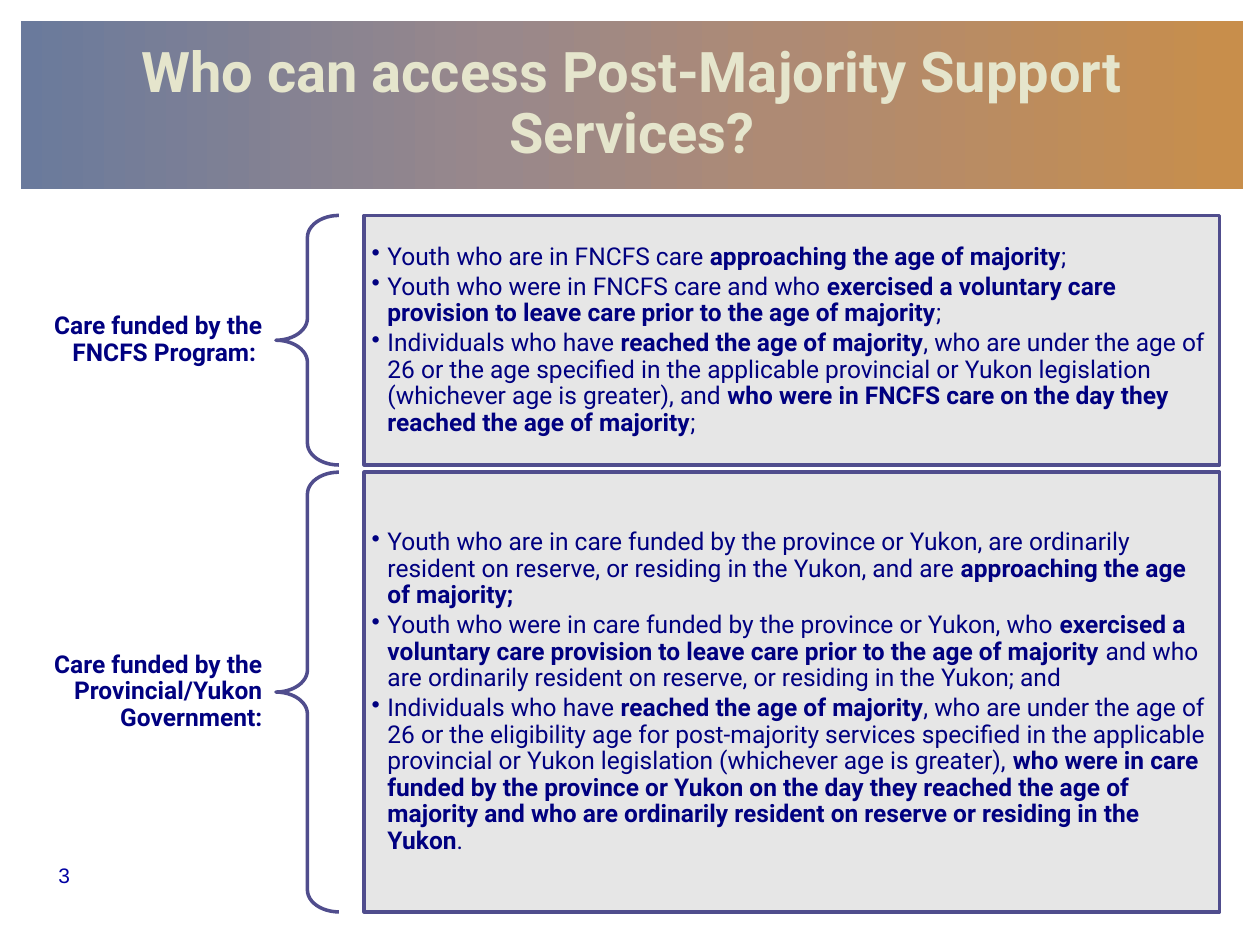
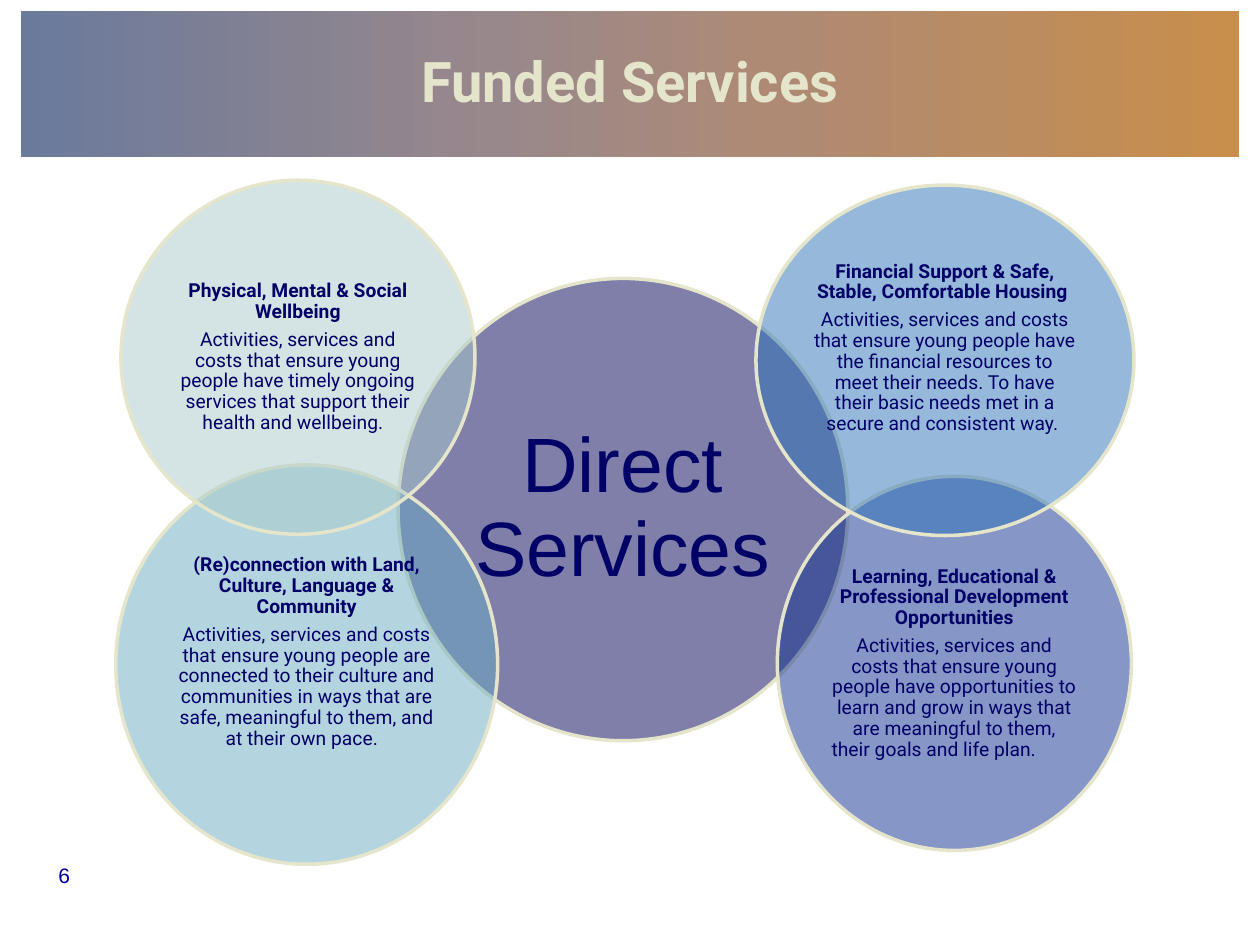
import lxml.etree
import pptx
import pptx.dml.color
import pptx.enum.shapes
import pptx.enum.text
import pptx.oxml.ns
import pptx.util

Pt = pptx.util.Pt
RGB = pptx.dml.color.RGBColor.from_string
qn = pptx.oxml.ns.qn
SHAPE = pptx.enum.shapes.MSO_SHAPE
ANCHOR = pptx.enum.text.MSO_ANCHOR
ALIGN = pptx.enum.text.PP_ALIGN

THEME = {
    "band": [(0, "6A7A9C"), (39, "99888B"), (62, "AE8A74"), (100, "C88E4B")],
    "panel": "E6E6E6",
    "panel_line": "504D8D",
    "circle_line": "E5E5CC",
    "line_width": 2,
    "title": {"name": "Roboto", "size": 32, "color": "E5E5CC", "bold": True},
    "number": {"name": "Arial", "size": 12, "color": "0000A3"},
    "label": {"name": "Roboto", "size": 14, "color": "000080", "bold": True},
    "body": {"name": "Roboto", "size": 14, "color": "000080"},
    "centre": {"name": "Arial", "size": 44, "color": "000066"},
    "circle": {"name": "Roboto", "size": 11, "color": "000066"},
}


def add_shape(slide, preset, box, fill=None, line=None):
    sp = slide.shapes.add_shape(preset, *(Pt(v) for v in box))
    sp.shadow.inherit = False
    if fill:
        sp.fill.solid()
        sp.fill.fore_color.rgb = RGB(fill)
    else:
        sp.fill.background()
    if line:
        sp.line.color.rgb = RGB(line)
        sp.line.width = Pt(THEME["line_width"])
    else:
        sp.line.fill.background()
    return sp


def write(sp, paragraphs, style, align, insets=(7.2, 3.6, 7.2, 3.6), after=0,
          anchor=ANCHOR.MIDDLE, bullet=False):
    """Fill a shape with paragraphs; *stars* enclose bold words."""
    tf = sp.text_frame
    tf.word_wrap = True
    tf.vertical_anchor = anchor
    for side, inset in zip(("left", "top", "right", "bottom"), insets):
        setattr(tf, f"margin_{side}", Pt(inset))
    for i, text in enumerate(paragraphs):
        p = tf.add_paragraph() if i else tf.paragraphs[0]
        for name, value in {"alignment": align, "line_spacing": 0.9,
                            "space_after": Pt(after)}.items():
            setattr(p, name, value)
        if bullet:
            pPr = p._p.get_or_add_pPr()
            pPr.set("marL", str(Pt(9)))
            pPr.set("indent", str(Pt(-9)))
            lxml.etree.SubElement(pPr, qn("a:buChar")).set("char", "•")
        for j, part in enumerate(text.split("*")):
            if not part:
                continue
            r = p.add_run()
            r.text = part
            r.font.color.rgb = RGB(style["color"])
            for name, value in {"name": style["name"], "size": Pt(style["size"]),
                                "bold": style.get("bold", j % 2 == 1)}.items():
                setattr(r.font, name, value)


prs = pptx.Presentation()
prs.slide_width, prs.slide_height = Pt(720), Pt(540)

# Title band and slide number on both slides
slides = []
for title, number, band_box in [
    ("Who can access Post-Majority Support Services?", "3", (12, 12, 698.5, 96)),
    ("Funded Services", "6", (12, 6, 696, 84)),
]:
    slide = prs.slides.add_slide(prs.slide_layouts[6])
    slides.append(slide)
    num = slide.shapes.add_textbox(Pt(2.9), Pt(491), Pt(67.7), Pt(21.6))
    write(num, [number], THEME["number"], ALIGN.CENTER, anchor=ANCHOR.TOP)
    band = add_shape(slide, SHAPE.RECTANGLE, band_box)
    band.fill.gradient()
    band.fill.gradient_angle = 0
    stops = band._element.spPr.find(qn("a:gradFill")).find(qn("a:gsLst"))
    for stop in list(stops):
        stops.remove(stop)
    for pos, color in THEME["band"]:
        stop = lxml.etree.SubElement(stops, qn("a:gs"))
        stop.set("pos", str(pos * 1000))
        lxml.etree.SubElement(stop, qn("a:srgbClr")).set("val", color)
    write(band, [title], THEME["title"], ALIGN.CENTER)

access, services = slides

# Who can access: label, brace and panel in each row
LABEL_LEFT, LABEL_WIDTH, LABEL_HEIGHT = 17.3, 140.4, 72
BRACE_LEFT, BRACE_WIDTH = 157.7, 36
PANEL_LEFT, PANEL_WIDTH = 208.1, 488.9
groups = [
    (123.1, 142.6, "Care funded by the FNCFS Program: ", [
        "Youth who are in FNCFS care *approaching the age of majority*;",
        "Youth who were in FNCFS care and who *exercised a voluntary care provision "
        "to leave care prior to the age of majority*;",
        "Individuals who have *reached the age of majority*, who are under the age of "
        "26 or the age specified in the applicable provincial or Yukon legislation "
        "(whichever age is greater), and *who were in FNCFS care on the day they "
        "reached the age of majority*;",
    ]),
    (269.8, 251.3, "Care funded by the Provincial/Yukon Government:", [
        "Youth who are in care funded by the province or Yukon, are ordinarily "
        "resident on reserve, or residing in the Yukon, and are *approaching the age "
        "of majority;*",
        "Youth who were in care funded by the province or Yukon, who *exercised a "
        "voluntary care provision to leave care prior to the age of majority* and who "
        "are ordinarily resident on reserve, or residing in the Yukon; and",
        "Individuals who have *reached the age of majority*, who are under the age of "
        "26 or the eligibility age for post-majority services specified in the "
        "applicable provincial or Yukon legislation (whichever age is greater), *who "
        "were in care funded by the province or Yukon on the day they reached the age "
        "of majority and who are ordinarily resident on reserve or residing in the "
        "Yukon*.",
    ]),
]
for top, height, label, rules in groups:
    label_top = top + (height - LABEL_HEIGHT) / 2
    tb = add_shape(access, SHAPE.RECTANGLE,
                   (LABEL_LEFT, label_top, LABEL_WIDTH, LABEL_HEIGHT))
    write(tb, [label], THEME["label"], ALIGN.RIGHT, (7.7, 2.9, 7.7, 2.9))
    brace = add_shape(access, SHAPE.LEFT_BRACE,
                      (BRACE_LEFT, top, BRACE_WIDTH, height), line=THEME["panel_line"])
    brace.adjustments[0] = 0.35
    brace.adjustments[1] = 0.5
    panel = add_shape(access, SHAPE.RECTANGLE, (PANEL_LEFT, top, PANEL_WIDTH, height),
                      THEME["panel"], THEME["panel_line"])
    write(panel, rules, THEME["body"], ALIGN.LEFT, (4.3,) * 4, after=2, bullet=True)

# Funded services: translucent circles, back to front, with the bottom inset of each
circles = [
    ((227.5, 159.1, 257, 264.2), "000056", "centre", 4.3, ["Direct Services"]),
    ((444.2, 272.2, 202.3, 213.8), "0F2F8E", "circle", 1.4, [
        "*Learning, Educational & Professional Development Opportunities*",
        "Activities, services and costs that ensure young people have opportunities "
        "to learn and grow in ways that are meaningful to them, their goals and life "
        "plan. \t"]),
    ((432, 105.8, 216, 200.2), "2C72B9", "circle", 15.4, [
        "*Financial Support & Safe, Stable, Comfortable Housing *",
        "Activities, services and costs that ensure young people have the financial "
        "resources to meet their needs. To have their basic needs met in a secure and "
        "consistent way. "]),
    ((66.2, 265.7, 218.2, 228.2), "6AACC3", "circle", 15.4, [
        "*(Re)connection with Land, Culture, Language & Community*",
        "Activities, services and costs that ensure young people are connected to "
        "their culture and communities in ways that are safe, meaningful to them, and "
        "at their own pace.  "]),
    ((69.1, 103, 202.3, 202.3), "AACACA", "circle", 1.4, [
        "*Physical, Mental & Social Wellbeing*",
        "Activities, services and costs that ensure young people have timely ongoing "
        "services that support their health and wellbeing.  "]),
]
for box, color, style, bottom, texts in circles:
    circle = add_shape(services, SHAPE.OVAL, box, color, THEME["circle_line"])
    fill = circle._element.spPr.find(qn("a:solidFill"))
    lxml.etree.SubElement(fill[0], qn("a:alpha")).set("val", "50000")
    side = 4.3 if style == "centre" else 1.4
    write(circle, texts, THEME[style], ALIGN.CENTER, (side, side, side, bottom), after=4)

prs.save("out.pptx")
